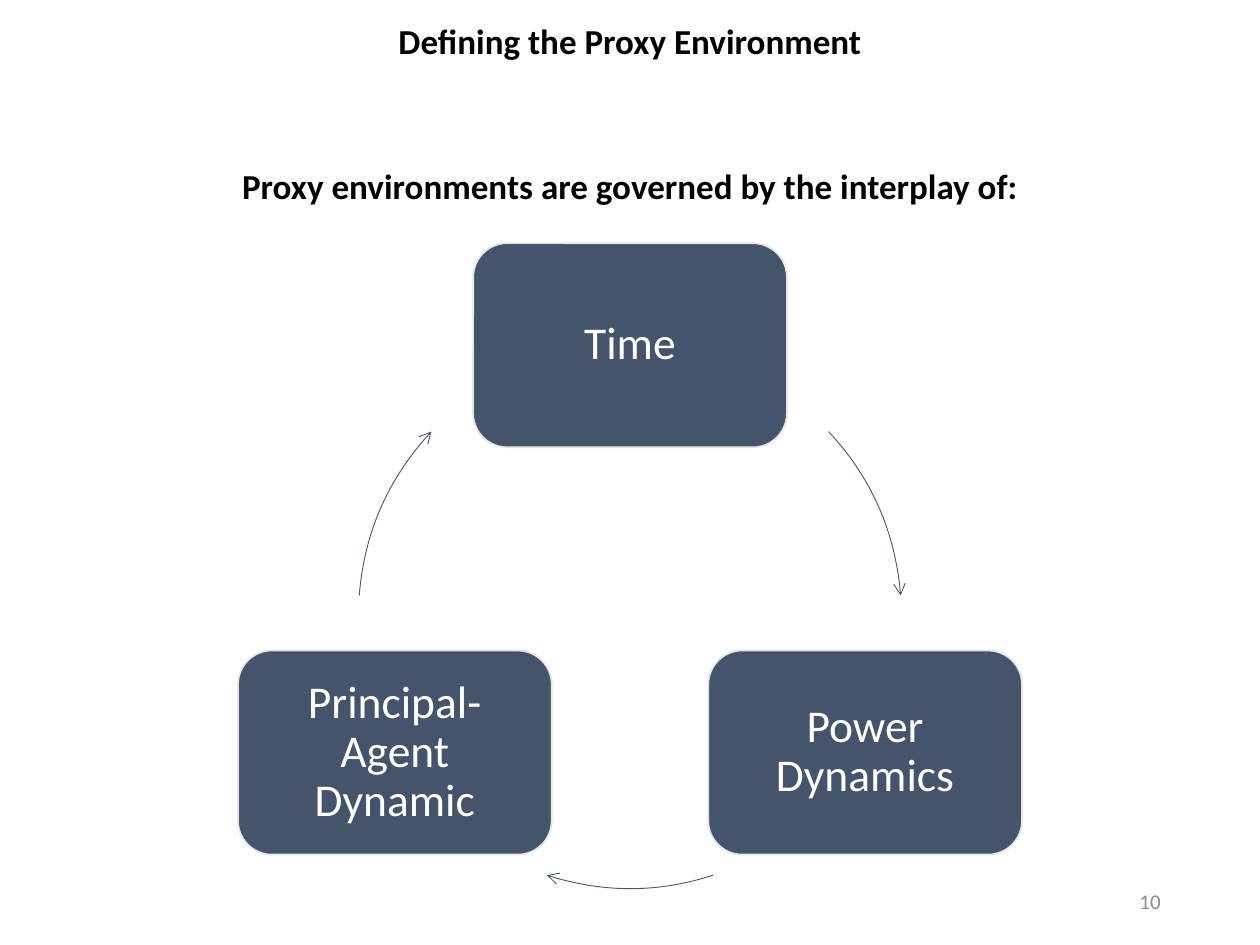
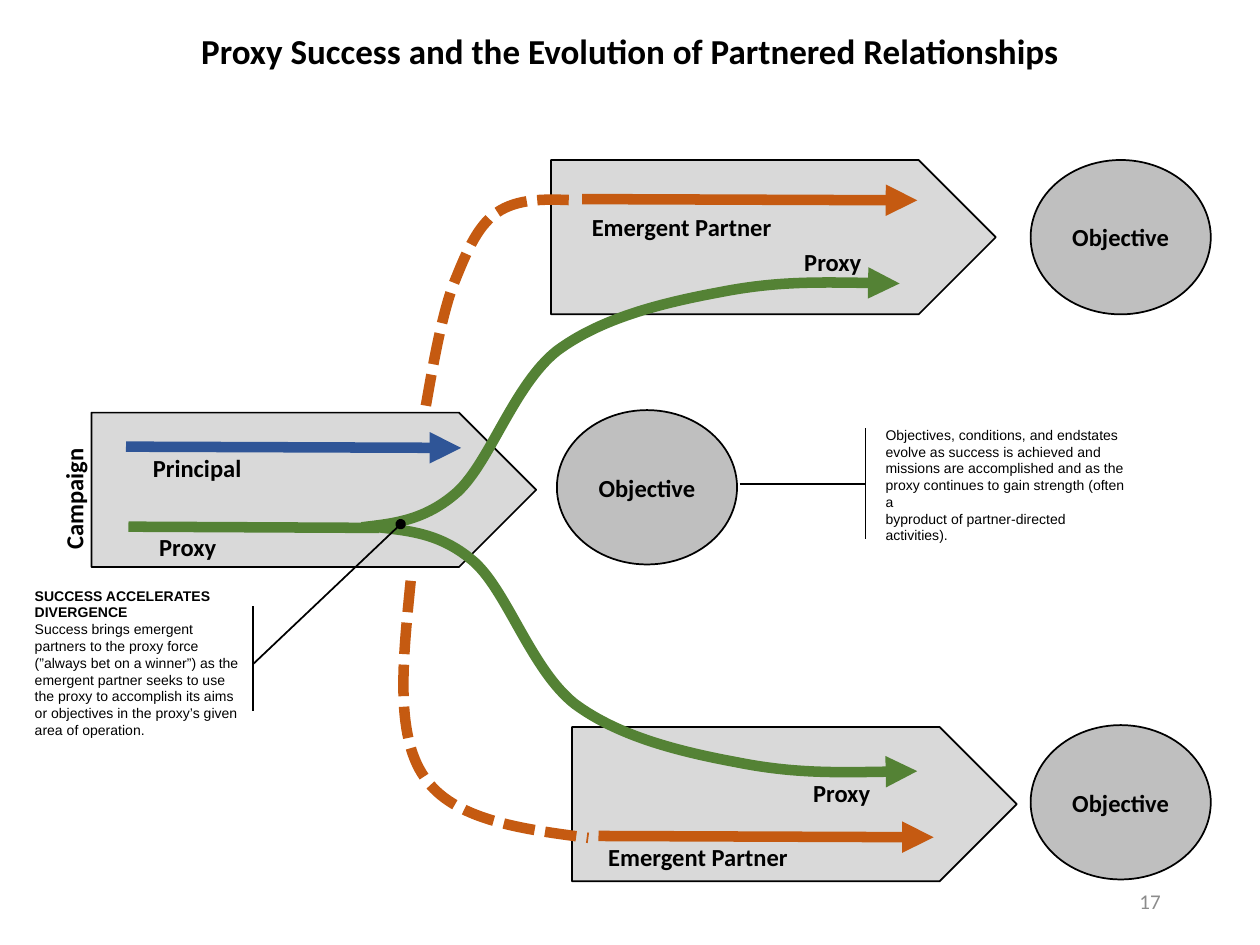
import math
import lxml.etree
import pptx
import pptx.dml.color
import pptx.enum.dml
import pptx.enum.shapes
import pptx.enum.text
import pptx.oxml.ns
import pptx.util

COLS, ROWS = 100, 75
CELL = pptx.util.Inches(0.1)
SHAPE = pptx.enum.shapes.MSO_SHAPE
ALIGN = pptx.enum.text.PP_ALIGN
HEAD, BODY = "Calibri", "Arial"
BLACK, WHITE, GREY = "000000", "FFFFFF", "8C8C8C"
SLATE, PALE = "44546A", "E7E6E6"
BLUE, GREEN, RUST = "2F5597", "548235", "C55A11"
PLATE, GOAL = "D9D9D9", "BFBFBF"
THICK = 6
HUB_X, HUB_Y, REACH = 50, 48.95, 21.55


def cells(*sizes):
    return [pptx.util.Emu(round(size * CELL)) for size in sizes]


def tint(code):
    return pptx.dml.color.RGBColor.from_string(code)


def add_tag(parent, tag, **traits):
    return lxml.etree.SubElement(parent, pptx.oxml.ns.qn(tag), **traits)


def add_run(para, text, size, color=BLACK, bold=False, font=HEAD):
    run = para.add_run()
    run.text = text
    run.font.size = pptx.util.Pt(size)
    run.font.name = font
    run.font.bold = bold
    run.font.color.rgb = tint(color)


def write(shape, lines, size, align=ALIGN.CENTER, color=BLACK, font=HEAD):
    frame = shape.text_frame
    frame.word_wrap = True
    frame.vertical_anchor = pptx.enum.text.MSO_ANCHOR.MIDDLE
    for spot, (text, bold) in enumerate(lines):
        para = frame.add_paragraph() if spot else frame.paragraphs[0]
        para.alignment = align
        add_run(para, text, size, color, bold, font)
    return frame


def add_text(slide, box, lines, size, **style):
    shape = slide.shapes.add_textbox(*cells(*box))
    write(shape, lines, size, **style)
    return shape


def add_label(slide, left, top, text, width=12):
    return add_text(slide, (left, top, width, 3.6), [(text, True)], 14)


def add_title(slide, text, height):
    add_text(slide, (0, 0, COLS, height), [(text, True)], 20)


def add_page(slide, number):
    add_text(slide, (70.6, 69.5, 22.5, 4), [(number, False)], 12,
             align=ALIGN.RIGHT, color=GREY)


def add_block(slide, kind, box, fill, line):
    shape = slide.shapes.add_shape(kind, *cells(*box))
    shape.shadow.inherit = False
    shape.fill.solid()
    shape.fill.fore_color.rgb = tint(fill)
    shape.line.color.rgb = tint(line)
    shape.line.width = pptx.util.Pt(1)
    return shape


def stroke(shape, color, width, head=None, tail=None, dash=False):
    shape.line.color.rgb = tint(color)
    shape.line.width = pptx.util.Pt(width)
    if dash:
        shape.line.dash_style = pptx.enum.dml.MSO_LINE.SQUARE_DOT
    for tag, kind in (("a:headEnd", head), ("a:tailEnd", tail)):
        if kind:
            add_tag(shape.get_or_add_ln(), tag, type=kind)


def add_line(slide, start, end, color=BLACK, width=1, **ends):
    kind = pptx.enum.shapes.MSO_CONNECTOR.STRAIGHT
    line = slide.shapes.add_connector(kind, *cells(*start, *end))
    stroke(line, color, width, **ends)
    add_tag(line._element.spPr, "a:effectLst")


def add_curve(slide, knots, box, color, width, **ends):
    left, top, right, base = box
    build = slide.shapes.build_freeform(*cells(left, top))
    build.add_line_segments([cells(right, base)], close=False)
    shape = build.convert_to_shape()
    route = shape._element.find(".//" + pptx.oxml.ns.qn("a:path"))
    for child in list(route):
        route.remove(child)
    for spot, (x, y) in enumerate(knots):
        if spot % 3 == 1 or spot == 0:
            step = add_tag(route, "a:cubicBezTo" if spot else "a:moveTo")
        across, down = cells(x - left, y - top)
        add_tag(step, "a:pt", x=str(across), y=str(down))
    shape.shadow.inherit = False
    shape.fill.background()
    stroke(shape, color, width, **ends)


def bounds(knots):
    across, down = zip(*knots[::3])
    return min(across), min(down), max(across), max(down)


def orbit(angle):
    turn = math.radians(angle)
    return HUB_X + REACH * math.sin(turn), HUB_Y - REACH * math.cos(turn)


def add_factor(slide, angle, text):
    x, y = orbit(angle)
    wide, high = 24.9, 16.2
    box = (x - wide / 2, y - high / 2, wide, high)
    shape = add_block(slide, SHAPE.ROUNDED_RECTANGLE, box, SLATE, PALE)
    frame = write(shape, [(text, False)], 26, color=WHITE)
    frame.paragraphs[0].line_spacing = 0.9
    frame.margin_left = frame.margin_right = pptx.util.Inches(0.11)
    frame.margin_top = frame.margin_bottom = pptx.util.Inches(0.11)


def add_arc(slide, start, end):
    pull = REACH * 4 / 3 * math.tan(math.radians(end - start) / 4)
    knots = []
    for angle, way in ((start, 1), (end, -1)):
        x, y = orbit(angle)
        turn = math.radians(angle)
        grip = (x + way * pull * math.cos(turn), y + way * pull * math.sin(turn))
        knots += [(x, y), grip][::way]
    box = (HUB_X - REACH, HUB_Y - REACH, HUB_X + REACH, HUB_Y + REACH)
    add_curve(slide, knots, box, SLATE, 0.5, tail="arrow")


def draw_cycle(slide):
    add_title(slide, "Defining the Proxy Environment", 6.4)
    add_page(slide, "10")
    names = ("Time", "Power Dynamics", "Principal-Agent Dynamic")
    arcs = ((47, 85.5), (162.2, 197.8), (274.5, 313))
    for spot, (name, arc) in enumerate(zip(names, arcs)):
        add_factor(slide, 120 * spot, name)
        add_arc(slide, *arc)
    add_text(slide, (10.7, 11.55, 78.6, 6.4),
             [("Proxy environments are governed by the interplay of:", True)], 20)


def add_stage(slide, plate, goal):
    add_block(slide, SHAPE.PENTAGON, (*plate, 35.3, 12.25), PLATE, BLACK)
    shape = add_block(slide, SHAPE.OVAL, (*goal, 14.3, 12.25), GOAL, BLACK)
    write(shape, [("Objective", True)], 14)


def add_actor(slide, left, top, color):
    add_line(slide, (left, top), (left + 26.6, top + 0.1), color, THICK, tail="triangle")


def add_branch(slide, left, flip):
    bend = ((0, 0), (2.5, 0.3), (5, 0.5), (7.6, 2.8), (10.2, 5.2), (12.1, 11.3),
            (15.5, 14), (19, 16.6), (23.8, 17.8), (28.4, 18.65),
            (32.9, 19.55), (37.8, 19.45), (42.7, 19.35))
    knots = [(left + x, 41.85 + flip * y) for x, y in bend]
    add_curve(slide, knots, bounds(knots), GREEN, THICK, tail="triangle")


def add_notes(slide):
    add_line(slide, (58.7, 38.4), (68.7, 38.4))
    add_line(slide, (68.7, 34), (68.7, 42.8))
    goals = ("Objectives, conditions, and endstates",
             "evolve as success is achieved and",
             "missions are accomplished and as the",
             "proxy continues to gain strength (often a",
             "byproduct of partner-directed activities).")
    add_text(slide, (69.3, 34.5, 21.3, 8), [(line, False) for line in goals], 8,
             align=ALIGN.LEFT, font=BODY)
    add_line(slide, (31.8, 41.6), (20.1, 52.7), head="oval")
    add_line(slide, (20.1, 48.1), (20.1, 56.4))
    success = (("SUCCESS ACCELERATES DIVERGENCE", True),
               ("Success brings emergent partners to the proxy force (”always bet on "
                "a winner”) as the emergent partner seeks to use the proxy to accomplish "
                "its aims or objectives in the proxy’s given area of operation.", False))
    add_text(slide, (1.77, 47.8, 18.9, 9.6), success, 8, align=ALIGN.LEFT, font=BODY)


def draw_split(slide):
    add_title(slide, "Proxy Success and the Evolution of Partnered Relationships", 8.05)
    for plate, goal in (((7.26, 32.75), (44.2, 32.55)),
                        ((43.74, 12.7), (81.8, 12.7)),
                        ((45.4, 57.7), (81.8, 57.55))):
        add_stage(slide, plate, goal)
    add_actor(slide, 10, 35.45, BLUE)
    add_line(slide, (10.2, 41.8), (30.1, 41.9), GREEN, THICK)
    add_branch(slide, 28.7, -1)
    add_branch(slide, 30.1, 1)
    add_label(slide, 9.65, 35.3, "Principal")
    for left, top in ((8.9, 41.6), (60.8, 61.1), (60.1, 19)):
        add_label(slide, left, top, "Proxy")
    for left, top, drop in ((46.2, 15.8, 0.4), (47.5, 66.35, -0.15)):
        add_actor(slide, left, top, RUST)
        add_label(slide, left - 1.15, top + drop, "Emergent Partner", 18.1)
    rise = ((33.8, 32.2), (34.4, 28.8), (35, 25.4), (35.9, 22.8), (36.9, 20.3),
            (37.8, 18), (39.4, 16.9), (41.1, 15.7), (43.4, 15.8), (45.7, 15.9))
    fall = ((32.6, 46.1), (32, 52.2), (31.3, 58.3), (33.7, 61.7),
            (36, 65.1), (41.4, 65.8), (46.7, 66.5))
    for knots, box in ((rise, bounds(rise)), (fall, (32, 46.1, 46.7, 66.5))):
        add_curve(slide, knots, box, RUST, THICK, dash=True)
    add_label(slide, -0.15, 37.8, "Campaign").rotation = 270
    add_notes(slide)
    add_page(slide, "17")


def main():
    deck = pptx.Presentation()
    deck.slide_width, deck.slide_height = cells(COLS, ROWS)
    for draw in (draw_cycle, draw_split):
        draw(deck.slides.add_slide(deck.slide_layouts[6]))
    deck.save("out.pptx")


if __name__ == "__main__":
    main()
